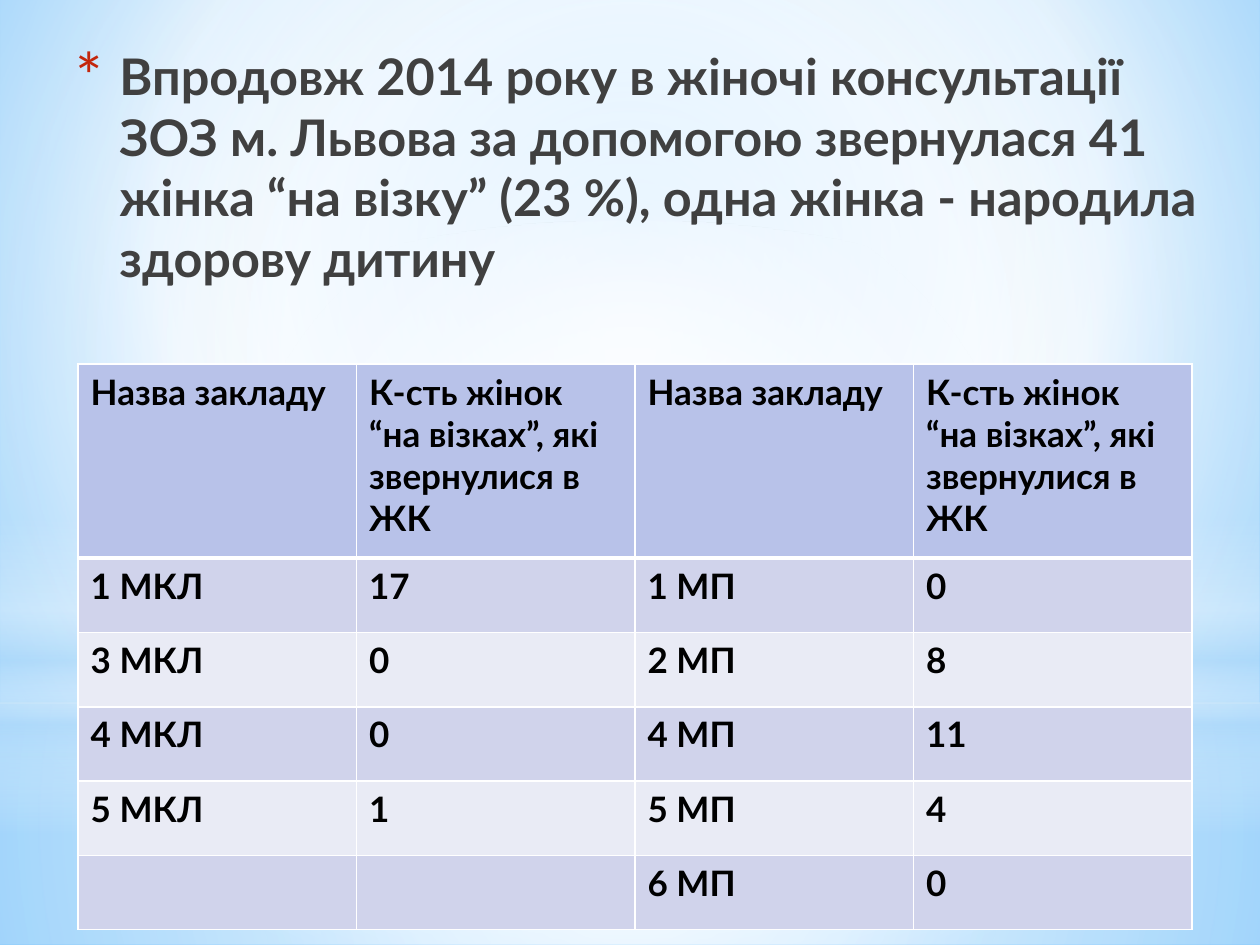
from lxml import etree
from pptx import Presentation
from pptx.dml.color import RGBColor
from pptx.enum import shapes, text
from pptx.oxml import ns
from pptx.util import Inches, Pt

HUE = {"white": "FFFFFF", "pale": "B4DCFA", "sky": "9ED5FF", "blue": "5BB9FF",
       "text": "404040", "black": "000000", "star": "C3260C",
       "head": "B8C2E9", "odd": "D0D3EB", "even": "E9EBF5"}


def add(base, tag, **attrs):
    node = etree.SubElement(base, ns.qn(tag))
    for key, val in attrs.items():
        node.set(key, str(val))
    return node


def shade(base, stops, focus):
    old = base.find(ns.qn("a:solidFill"))
    grad = etree.Element(ns.qn("a:gradFill"), rotWithShape="1")
    base.replace(old, grad)
    group = add(grad, "a:gsLst")
    for pos, hue, alpha in stops:
        stop = add(group, "a:gs", pos=pos * 1000)
        tint = add(stop, "a:srgbClr", val=HUE[hue])
        if alpha < 100:
            add(tint, "a:alpha", val=alpha * 1000)
    if focus:
        way = add(grad, "a:path", path="circle")
        add(way, "a:fillToRect", **{side: val * 1000 for side, val in zip("ltrb", focus)})
    else:
        add(grad, "a:lin", ang=5400000, scaled=0)


deck = Presentation()
deck.slide_width, deck.slide_height = Inches(10), Inches(7.5)
slide = deck.slides.add_slide(deck.slide_layouts[6])

slide.background.fill.solid()
slide.background.fill.fore_color.rgb = RGBColor.from_string(HUE["white"])
back = slide.element.find(".//" + ns.qn("p:bgPr"))
shade(back, [(0, "sky", 100), (60, "white", 100), (100, "blue", 100)], (20, 10, 20, 60))

mid = (50, 50, 50, 50)
rect, oval = shapes.MSO_SHAPE.RECTANGLE, shapes.MSO_SHAPE.OVAL
glows = [
    (rect, 5.58, 1.92, mid, [(0, "white", 91), (37, "white", 76), (100, "pale", 79)]),
    (rect, 0, 5.58, mid, [(0, "white", 89), (48, "white", 62), (100, "pale", 79)]),
    (rect, 4.12, 2.5, None, [(0, "white", 0), (29, "white", 30), (45, "pale", 40),
                             (55, "white", 26), (65, "pale", 60), (100, "white", 0)]),
    (oval, 1.75, 5.58, mid, [(0, "white", 100), (56, "white", 0)]),
]
for kind, top, high, focus, stops in glows:
    glow = slide.shapes.add_shape(kind, 0, Inches(top), Inches(10), Inches(high))
    glow.shadow.inherit = False
    glow.line.fill.background()
    glow.fill.solid()
    shade(glow.element.spPr, stops, focus)

box = slide.shapes.add_textbox(Inches(0.5), Inches(0.31), Inches(9.34), Inches(3.05))
frame = box.text_frame
frame.word_wrap = True
frame.vertical_anchor = text.MSO_ANCHOR.TOP
para = frame.paragraphs[0]
para.text = ("Впродовж 2014 року в жіночі консультації ЗОЗ м. Львова за допомогою "
             "звернулася 41 жінка “на візку” (23 %), одна жінка - народила здорову дитину")
props = para._p.get_or_add_pPr()
props.set("marL", str(Inches(0.35)))
props.set("indent", str(-Inches(0.35)))
add(add(props, "a:buClr"), "a:srgbClr", val=HUE["star"])
add(props, "a:buSzPct", val=128000)
add(props, "a:buFont", typeface="Lato")
add(props, "a:buChar", char="*")
font = para.font
font.name, font.size, font.bold = "Lato", Pt(28.8), True
font.color.rgb = RGBColor.from_string(HUE["text"])

name, count = "Назва закладу", "К-сть жінок “на візках”, які звернулися в ЖК"
rows = [
    (name, count, name, count),
    ("1 МКЛ", "17", "1 МП", "0"),
    ("3 МКЛ", "0", "2 МП", "8"),
    ("4 МКЛ", "0", "4 МП", "11"),
    ("5 МКЛ", "1", "5 МП", "4"),
    ("", "", "6 МП", "0"),
]
grid = slide.shapes.add_table(len(rows), 4, Inches(0.62), Inches(2.89),
                              Inches(8.84), Inches(4.49)).table
for col in grid.columns:
    col.width = Inches(2.21)
for r, row in enumerate(rows):
    grid.rows[r].height = Inches(0.59 if r else 1.54)
    tone = "head" if r == 0 else "odd" if r % 2 else "even"
    for c, word in enumerate(row):
        cell = grid.cell(r, c)
        edge = cell._tc.get_or_add_tcPr()
        for side in "LRTB":
            thick = 3 if (r, side) in ((0, "B"), (1, "T")) else 1
            line = add(edge, "a:ln" + side, w=Pt(thick))
            add(add(line, "a:solidFill"), "a:srgbClr", val=HUE["white"])
        cell.fill.solid()
        cell.fill.fore_color.rgb = RGBColor.from_string(HUE[tone])
        para = cell.text_frame.paragraphs[0]
        if word:
            para.text = word
        font = para.font
        font.name, font.size, font.bold = "Lato", Pt(20), True
        font.color.rgb = RGBColor.from_string(HUE["black"])

deck.save("out.pptx")
